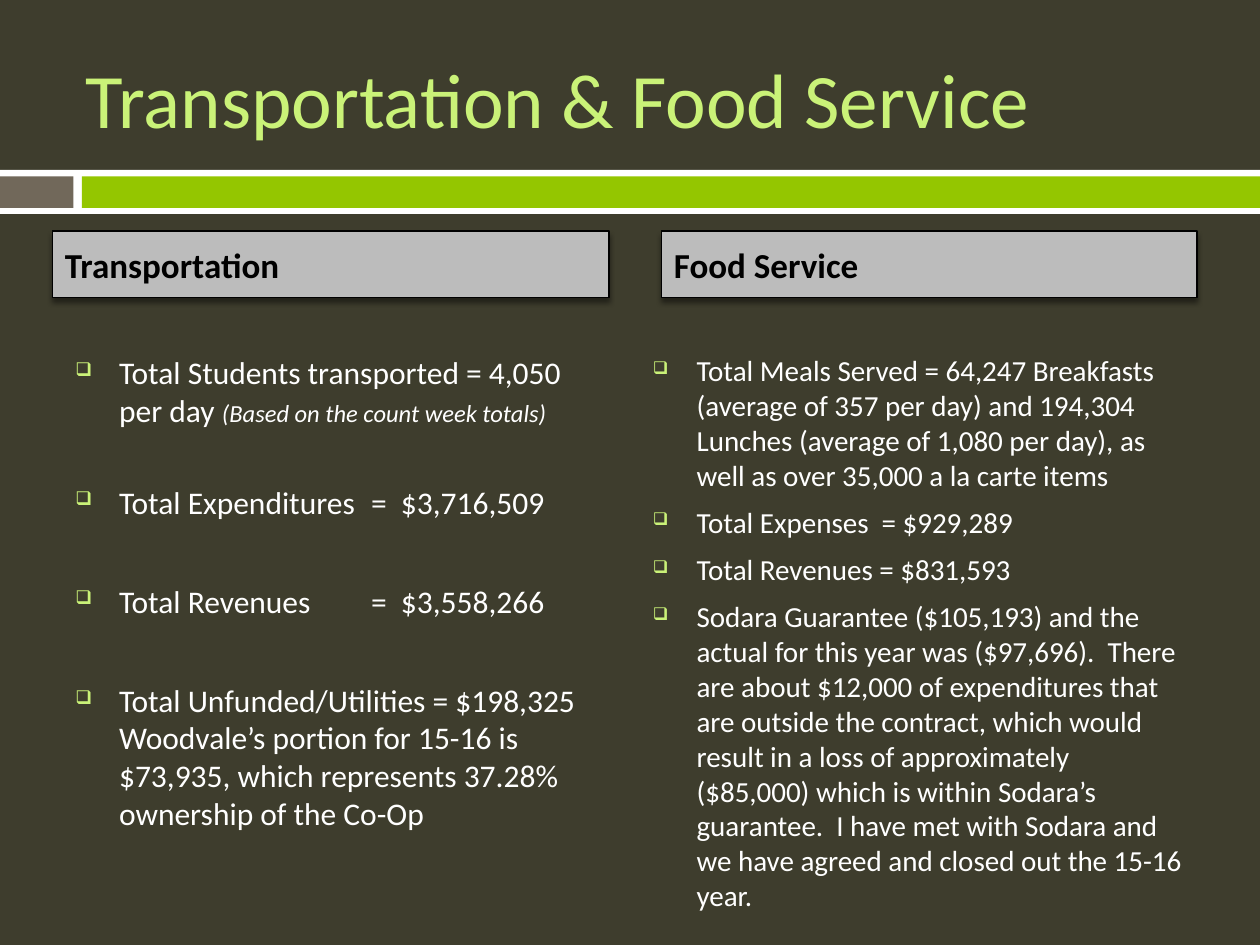
"""Builds the Transportation & Food Service slide."""
from pptx import Presentation
from pptx.dml.color import RGBColor
from pptx.enum.shapes import MSO_SHAPE as Shape
from pptx.enum.text import MSO_ANCHOR as Anchor
from pptx.oxml import parse_xml
from pptx.util import Pt

WHITE = RGBColor(0xFF, 0xFF, 0xFF)
BLACK = RGBColor(0x00, 0x00, 0x00)
OLIVE = RGBColor(0x3E, 0x3D, 0x2D)
BROWN = RGBColor(0x71, 0x68, 0x5A)
GREEN = RGBColor(0x94, 0xC6, 0x00)
LIME = RGBColor(0xCA, 0xF2, 0x78)
GREY = RGBColor(0xBC, 0xBC, 0xBC)
DRAWING = 'xmlns:a="http://schemas.openxmlformats.org/drawingml/2006/main"'

TRANSPORT = [
    (0, [("Total Students transported = 4,050 per day ", 18, False),
         ("(Based on the count week totals)", 14, True)]),
    (31, [("Total Expenditures\t=  $3,716,509", 18, False)]),
    (35, [("Total Revenues\t=  $3,558,266", 18, False)]),
    (35, [("Total Unfunded/Utilities = $198,325 Woodvale’s portion for 15-16 is "
           "$73,935, which represents 37.28% ownership of the Co-Op", 18, False)]),
]
FOOD = [(7, [(text, 16.6, False)]) for text in (
    "Total Meals Served = 64,247 Breakfasts (average of 357 per day) and 194,304 "
    "Lunches (average of 1,080 per day), as well as over 35,000 a la carte items",
    "Total Expenses  = $929,289",
    "Total Revenues = $831,593",
    "Sodara Guarantee ($105,193) and the actual for this year was ($97,696).  There "
    "are about $12,000 of expenditures that are outside the contract, which would "
    "result in a loss of approximately ($85,000) which is within Sodara’s guarantee.  "
    "I have met with Sodara and we have agreed and closed out the 15-16 year.",
)]


class SlideWriter:
    """Holds the style and the current slide."""

    font = "Calibri"
    indent = 25
    tab_stop = 169

    def __init__(self, page):
        self.page = page
        page.background.fill.solid()
        page.background.fill.fore_color.rgb = OLIVE

    def span(self, para, text, size, color, bold=False, italic=False):
        """Adds one styled run."""
        span = para.add_run()
        span.text = text
        span.font.name = self.font
        span.font.size = Pt(size)
        span.font.color.rgb = color
        span.font.bold = bold
        span.font.italic = italic

    def bar(self, left, top, width, height, color):
        """Adds a plain rectangle."""
        bar = self.page.shapes.add_shape(
            Shape.RECTANGLE, Pt(left), Pt(top), Pt(width), Pt(height))
        bar.shadow.inherit = False
        bar.fill.solid()
        bar.fill.fore_color.rgb = color
        bar.line.fill.background()
        return bar

    def text_box(self, left, top, width, height):
        """Adds a wrapping text box and returns its frame."""
        box = self.page.shapes.add_textbox(Pt(left), Pt(top), Pt(width), Pt(height))
        box.text_frame.word_wrap = True
        return box.text_frame

    def title(self, text, left, top, width, height):
        """Adds the slide title."""
        frame = self.text_box(left, top, width, height)
        frame.vertical_anchor = Anchor.MIDDLE
        self.span(frame.paragraphs[0], text, 44, LIME)

    def heading(self, text, left, width):
        """Adds a shadowed column heading."""
        box = self.bar(left, 132, width, 38, GREY)
        box.line.color.rgb = BLACK
        box.line.width = Pt(0.79)
        effects = box._element.spPr.find(
            "{http://schemas.openxmlformats.org/drawingml/2006/main}effectLst")
        effects.append(parse_xml(
            f'<a:outerShdw {DRAWING} blurRad="{Pt(3)}" dist="{Pt(2.4)}" dir="5400000" '
            'rotWithShape="0"><a:srgbClr val="000000"><a:alpha val="45000"/>'
            '</a:srgbClr></a:outerShdw>'))
        box.text_frame.vertical_anchor = Anchor.MIDDLE
        para = box.text_frame.paragraphs[0]
        para.alignment = 1
        self.span(para, text, 20, BLACK, bold=True)

    def bullets(self, items, left, height):
        """Adds a column of bulleted paragraphs."""
        frame = self.text_box(left, 198, 318, height)
        for index, (gap, spans) in enumerate(items):
            para = frame.add_paragraph() if index else frame.paragraphs[0]
            para.space_before = Pt(gap)
            self.bullet(para)
            for text, size, italic in spans:
                self.span(para, text, size, WHITE, italic=italic)

    def bullet(self, para):
        """Gives a paragraph its hanging bullet and tab stop."""
        props = para._p.get_or_add_pPr()
        props.set("marL", str(Pt(self.indent)))
        props.set("indent", str(-Pt(self.indent)))
        for xml in (
            f'<a:buClr {DRAWING}><a:srgbClr val="{LIME}"/></a:buClr>',
            f'<a:buSzPct {DRAWING} val="60000"/>',
            f'<a:buChar {DRAWING} char="❑"/>',
            f'<a:tabLst {DRAWING}><a:tab pos="{Pt(self.tab_stop)}" algn="l"/></a:tabLst>',
        ):
            props.append(parse_xml(xml))


def main():
    """Builds and saves the deck."""
    deck = Presentation()
    deck.slide_width, deck.slide_height = Pt(720), Pt(540)
    writer = SlideWriter(deck.slides.add_slide(deck.slide_layouts[6]))
    writer.bar(0, 97, 720, 25.2, WHITE)
    writer.bar(0, 100.8, 42, 18, BROWN)
    writer.bar(46.8, 100.8, 673.2, 18, GREEN)
    writer.title("Transportation & Food Service", 42, 21.6, 642, 68.4)
    writer.bullets(TRANSPORT, 36, 306)
    writer.bullets(FOOD, 366, 330)
    writer.heading("Transportation", 30, 318)
    writer.heading("Food Service", 378, 306)
    deck.save("out.pptx")


if __name__ == "__main__":
    main()
